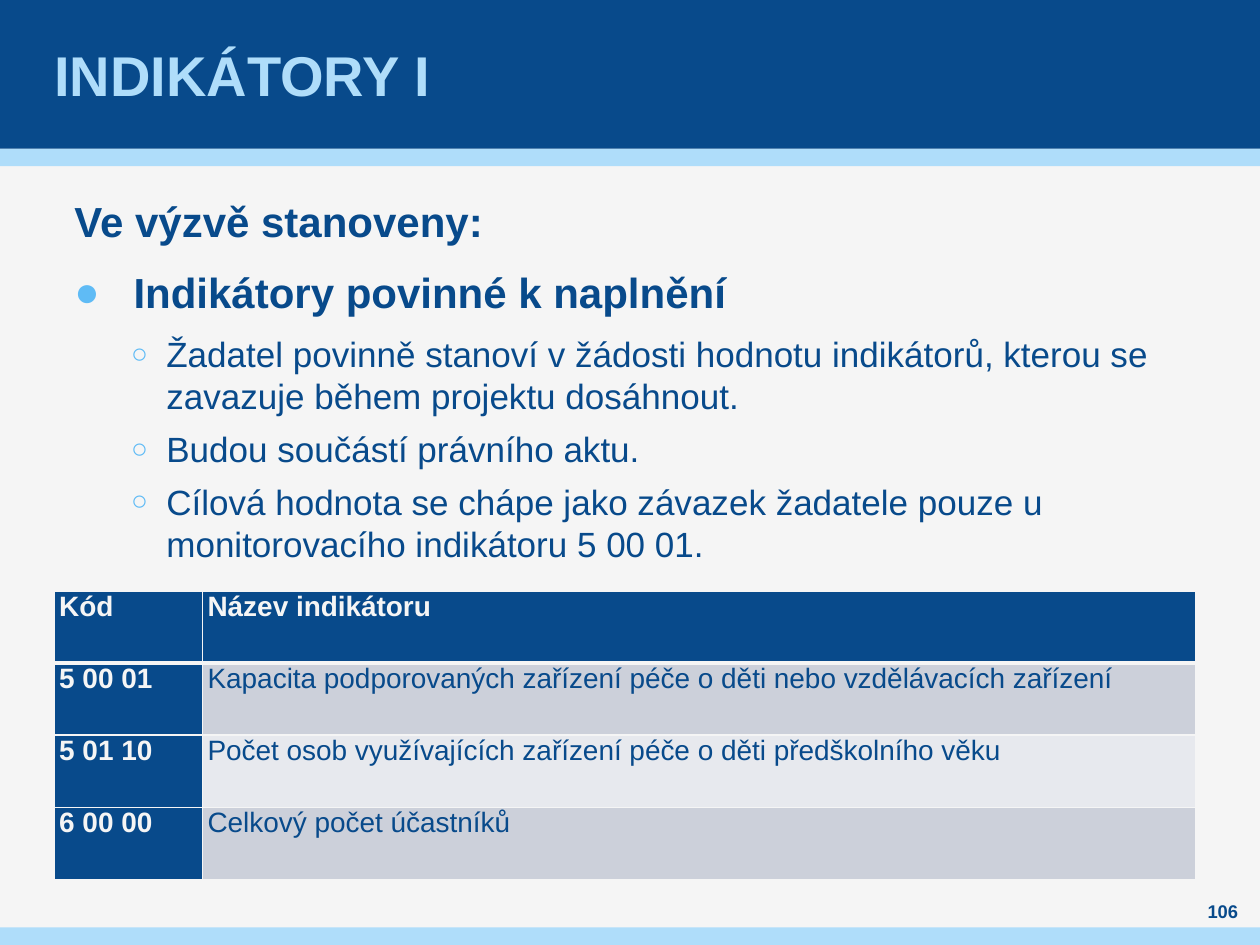
from lxml import etree
from pptx import Presentation
from pptx.dml.color import RGBColor
from pptx.enum.shapes import MSO_SHAPE
from pptx.enum.text import MSO_ANCHOR, PP_ALIGN
from pptx.oxml.ns import qn
from pptx.util import Inches, Pt

RECTANGLE = MSO_SHAPE.RECTANGLE
TOP, MIDDLE = MSO_ANCHOR.TOP, MSO_ANCHOR.MIDDLE
LEFT, CENTER = PP_ALIGN.LEFT, PP_ALIGN.CENTER

PAPER = RGBColor(0xF5, 0xF5, 0xF5)
NAVY = RGBColor(0x08, 0x4A, 0x8B)
SKY = RGBColor(0xAF, 0xDD, 0xFA)
BULLET = RGBColor(0x5F, 0xBB, 0xF5)
BAND_DARK = RGBColor(0xCC, 0xD0, 0xDA)
BAND_LIGHT = RGBColor(0xE7, 0xE9, 0xEE)

FONT = "Arial"
WIDTH, HEIGHT = 10, 7.5
HEADER_HEIGHT, STRIPE_HEIGHT = 1.18, 0.14

# Per list level: size, bold, line spacing, space around, indent, hanging, bullet, bullet %
LEVELS = {
    "heading": (24, True, 28.8, 6, 0, 0, None, 100),
    "item": (24, True, 28.8, 6, 0.47, 0.47, "●", 100),
    "detail": (20, False, 24, 3, 0.73, 0.28, "○", 80),
}
BODY = [
    ("heading", "Ve výzvě stanoveny:"),
    ("item", "Indikátory povinné k naplnění"),
    ("detail", "Žadatel povinně stanoví v žádosti hodnotu indikátorů, "
               "kterou se zavazuje během projektu dosáhnout."),
    ("detail", "Budou součástí právního aktu."),
    ("detail", "Cílová hodnota se chápe jako závazek žadatele pouze u "
               "monitorovacího indikátoru 5 00 01."),
]
INDICATORS = [
    ("Kód", "Název indikátoru"),
    ("5 00 01", "Kapacita podporovaných zařízení péče o děti nebo vzdělávacích zařízení"),
    ("5 01 10", "Počet osob využívajících zařízení péče o děti předškolního věku"),
    ("6 00 00", "Celkový počet účastníků"),
]


def inches(box):
    return [Inches(length) for length in box]


def add_run(paragraph, text, size, color, bold):
    run = paragraph.add_run()
    run.text = text
    run.font.name = FONT
    run.font.size = Pt(size)
    run.font.bold = bold
    run.font.color.rgb = color


def add_text_frame(slide, box, anchor, side_margin=0):
    frame = slide.shapes.add_textbox(*inches(box)).text_frame
    frame.word_wrap = True
    frame.vertical_anchor = anchor
    frame.margin_left = frame.margin_right = Inches(side_margin)
    frame.margin_top = frame.margin_bottom = 0
    return frame


def add_band(slide, box, color):
    band = slide.shapes.add_shape(RECTANGLE, *inches(box))
    band.shadow.inherit = False
    band.fill.solid()
    band.fill.fore_color.rgb = color
    band.line.fill.background()


def set_indent(paragraph, left, hanging=0):
    properties = paragraph._p.get_or_add_pPr()
    properties.set("marL", str(Inches(left)))
    properties.set("indent", str(-Inches(hanging)))
    return properties


def add_color(parent, color):
    etree.SubElement(parent, qn("a:srgbClr"), val=str(color))


def add_bullet(properties, character, percent):
    add_color(etree.SubElement(properties, qn("a:buClr")), BULLET)
    etree.SubElement(properties, qn("a:buSzPct"), val=str(percent * 1000))
    etree.SubElement(properties, qn("a:buFont"), typeface=FONT)
    etree.SubElement(properties, qn("a:buChar"), char=character)


def set_borders(cell, widths):
    """Borders come before the fill in the cell properties."""
    properties = cell._tc.get_or_add_tcPr()
    for position, (side, width) in enumerate(widths.items()):
        line = etree.Element(qn("a:ln" + side), w=str(Pt(width)))
        add_color(etree.SubElement(line, qn("a:solidFill")), PAPER)
        properties.insert(position, line)


def add_header(slide, box):
    left, top, width, height = box
    add_band(slide, (left, top + height, width, STRIPE_HEIGHT), SKY)
    add_band(slide, box, NAVY)
    title_box = (left + 0.39, top, width - 0.79, height)
    frame = add_text_frame(slide, title_box, MIDDLE, 0.04)
    add_run(frame.paragraphs[0], "INDIKÁTORY I", 32, SKY, True)


def add_body(slide, box):
    frame = add_text_frame(slide, box, TOP)
    for index, (level, text) in enumerate(BODY):
        size, bold, spacing, gap, left, hanging, bullet, percent = LEVELS[level]
        paragraph = frame.add_paragraph() if index else frame.paragraphs[0]
        paragraph.alignment = LEFT
        paragraph.line_spacing = Pt(spacing)
        paragraph.space_before = paragraph.space_after = Pt(gap)
        properties = set_indent(paragraph, left, hanging)
        if bullet:
            add_bullet(properties, bullet, percent)
        add_run(paragraph, text, size, NAVY, bold)


def add_indicator_table(slide, box):
    left, top, width, height = box
    row_count = len(INDICATORS)
    table = slide.shapes.add_table(row_count, 2, *inches(box)).table
    code_width = 0.13 * width
    table.columns[0].width = Inches(code_width)
    table.columns[1].width = Inches(width - code_width)
    for row, texts in enumerate(INDICATORS):
        table.rows[row].height = Inches(height / row_count)
        for column, text in enumerate(texts):
            is_heading = row == 0 or column == 0
            cell = table.cell(row, column)
            cell.margin_left = cell.margin_right = 0
            cell.margin_top = cell.margin_bottom = 0
            cell.fill.solid()
            band = BAND_DARK if row % 2 else BAND_LIGHT
            cell.fill.fore_color.rgb = NAVY if is_heading else band
            set_borders(cell, {"L": 1, "R": 1, "T": 3 if row == 1 else 1,
                               "B": 3 if row == 0 else 1})
            paragraph = cell.text_frame.paragraphs[0]
            paragraph.space_before = Pt(3)
            paragraph.space_after = Pt(0 if row else 3)
            set_indent(paragraph, 0.04)
            add_run(paragraph, text, 16, PAPER if is_heading else NAVY, is_heading)


def add_footer(slide, box):
    left, top, width, height = box
    add_band(slide, box, SKY)
    number_box = (left + width - 0.55, top - 0.23, 0.51, 0.2)
    paragraph = add_text_frame(slide, number_box, MIDDLE).paragraphs[0]
    paragraph.alignment = CENTER
    add_run(paragraph, "106", 10.5, NAVY, True)


def main():
    presentation = Presentation()
    presentation.slide_width, presentation.slide_height = inches((WIDTH, HEIGHT))
    slide = presentation.slides.add_slide(presentation.slide_layouts[6])
    slide.background.fill.solid()
    slide.background.fill.fore_color.rgb = PAPER

    add_header(slide, (0, 0, WIDTH, HEADER_HEIGHT))
    add_body(slide, (0.59, 1.55, 8.82, 5.15))
    add_footer(slide, (0, HEIGHT - STRIPE_HEIGHT, WIDTH, STRIPE_HEIGHT))
    add_indicator_table(slide, (0.43, 4.69, 9.06, 2.29))
    presentation.save("out.pptx")


if __name__ == "__main__":
    main()
